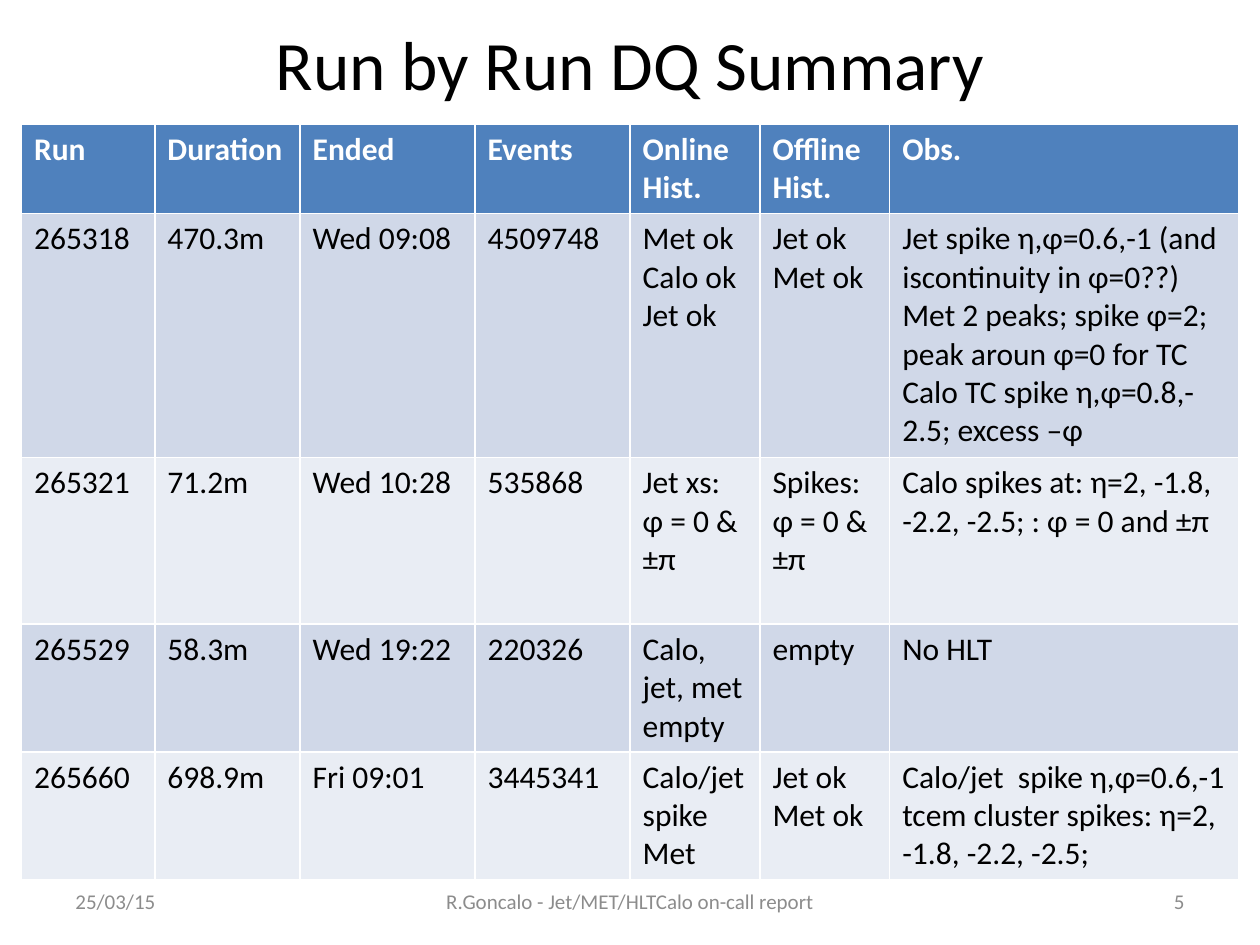
import pptx
import pptx.dml.color
import pptx.enum.text
import pptx.util

Pt = pptx.util.Pt
RGBColor = pptx.dml.color.RGBColor
ALIGN = pptx.enum.text.PP_ALIGN
ANCHOR = pptx.enum.text.MSO_ANCHOR

FONT = "Calibri"
BLACK = RGBColor(0x00, 0x00, 0x00)
WHITE = RGBColor(0xFF, 0xFF, 0xFF)
GRAY = RGBColor(0x8C, 0x8C, 0x8C)
HEADER_BLUE = RGBColor(0x4F, 0x81, 0xBD)
BAND_FILLS = [RGBColor(0xD0, 0xD8, 0xE8), RGBColor(0xE9, 0xED, 0xF4)]

COLUMN_WIDTHS = [76.2, 83, 100, 88.6, 74.2, 74.2, 199.4]
ROW_HEIGHTS = [51, 139.5, 95, 73, 73]

# Each line of a cell is a paragraph of its own.
RUN_ROWS = [
    ["Run", "Duration", "Ended", "Events", "Online Hist.", "Offline Hist.", "Obs."],
    ["265318", "470.3m", "Wed 09:08", "4509748",
     "Met ok\nCalo ok\nJet ok", "Jet ok\nMet ok",
     "Jet spike η,φ=0.6,-1 (and iscontinuity in φ=0??)\n"
     "Met 2 peaks; spike φ=2; peak aroun φ=0 for TC\n"
     "Calo TC spike η,φ=0.8,-2.5; excess –φ"],
    ["265321", "71.2m", "Wed 10:28", "535868",
     "Jet xs: φ = 0 & ±π", "Spikes: φ = 0 & ±π",
     "Calo spikes at: η=2, -1.8, -2.2, -2.5; : φ = 0 and ±π"],
    ["265529", "58.3m", "Wed 19:22", "220326",
     "Calo, jet, met empty", "empty", "No HLT"],
    ["265660", "698.9m", "Fri 09:01", "3445341",
     "Calo/jet spike\nMet", "Jet ok\nMet ok",
     "Calo/jet  spike η,φ=0.6,-1\n"
     "tcem cluster spikes: η=2, -1.8, -2.2, -2.5;"],
]


def write_text(text_frame, text, size, color, align=ALIGN.LEFT, bold=False):
    for index, line in enumerate(text.split("\n")):
        paragraph = text_frame.add_paragraph() if index else text_frame.paragraphs[0]
        paragraph.alignment = align
        run = paragraph.add_run()
        run.text = line
        run.font.name = FONT
        run.font.size = Pt(size)
        run.font.bold = bold
        run.font.color.rgb = color


def add_title(slide, left, top, width, height):
    title = slide.shapes.title
    title.left, title.top = Pt(left), Pt(top)
    title.width, title.height = Pt(width), Pt(height)
    title.text_frame.vertical_anchor = ANCHOR.MIDDLE
    write_text(title.text_frame, "Run by Run DQ Summary", 39.6, BLACK, ALIGN.CENTER)


def add_run_table(slide, left, top):
    """The default table style supplies the white grid and the thick header rule."""
    table = slide.shapes.add_table(
        len(ROW_HEIGHTS), len(COLUMN_WIDTHS), Pt(left), Pt(top),
        Pt(sum(COLUMN_WIDTHS)), Pt(sum(ROW_HEIGHTS))).table
    for column, width in zip(table.columns, COLUMN_WIDTHS):
        column.width = Pt(width)
    for row_index, (row, texts) in enumerate(zip(table.rows, RUN_ROWS)):
        row.height = Pt(ROW_HEIGHTS[row_index])
        is_header = row_index == 0
        fill_color = HEADER_BLUE if is_header else BAND_FILLS[(row_index - 1) % 2]
        for cell, text in zip(row.cells, texts):
            cell.fill.solid()
            cell.fill.fore_color.rgb = fill_color
            write_text(cell.text_frame, text, 18,
                       WHITE if is_header else BLACK, bold=is_header)


def add_footer(slide, left, top, width, height):
    side_width, center_width = 168, 228
    parts = [
        ("25/03/15", left, side_width, ALIGN.LEFT),
        ("R.Goncalo - Jet/MET/HLTCalo on-call report",
         left + (width - center_width) / 2, center_width, ALIGN.CENTER),
        ("5", left + width - side_width, side_width, ALIGN.RIGHT),
    ]
    for text, part_left, part_width, align in parts:
        box = slide.shapes.add_textbox(Pt(part_left), Pt(top), Pt(part_width), Pt(height))
        box.text_frame.word_wrap = True
        box.text_frame.vertical_anchor = ANCHOR.MIDDLE
        write_text(box.text_frame, text, 12, GRAY, align)


def main():
    presentation = pptx.Presentation()
    presentation.slide_width, presentation.slide_height = Pt(720), Pt(540)
    slide = presentation.slides.add_slide(presentation.slide_layouts[5])
    add_title(slide, 36, 10.8, 648, 50.4)
    add_run_table(slide, 12.3, 70.8)
    add_footer(slide, 36, 500.5, 648, 28.75)
    presentation.save("out.pptx")


if __name__ == "__main__":
    main()
